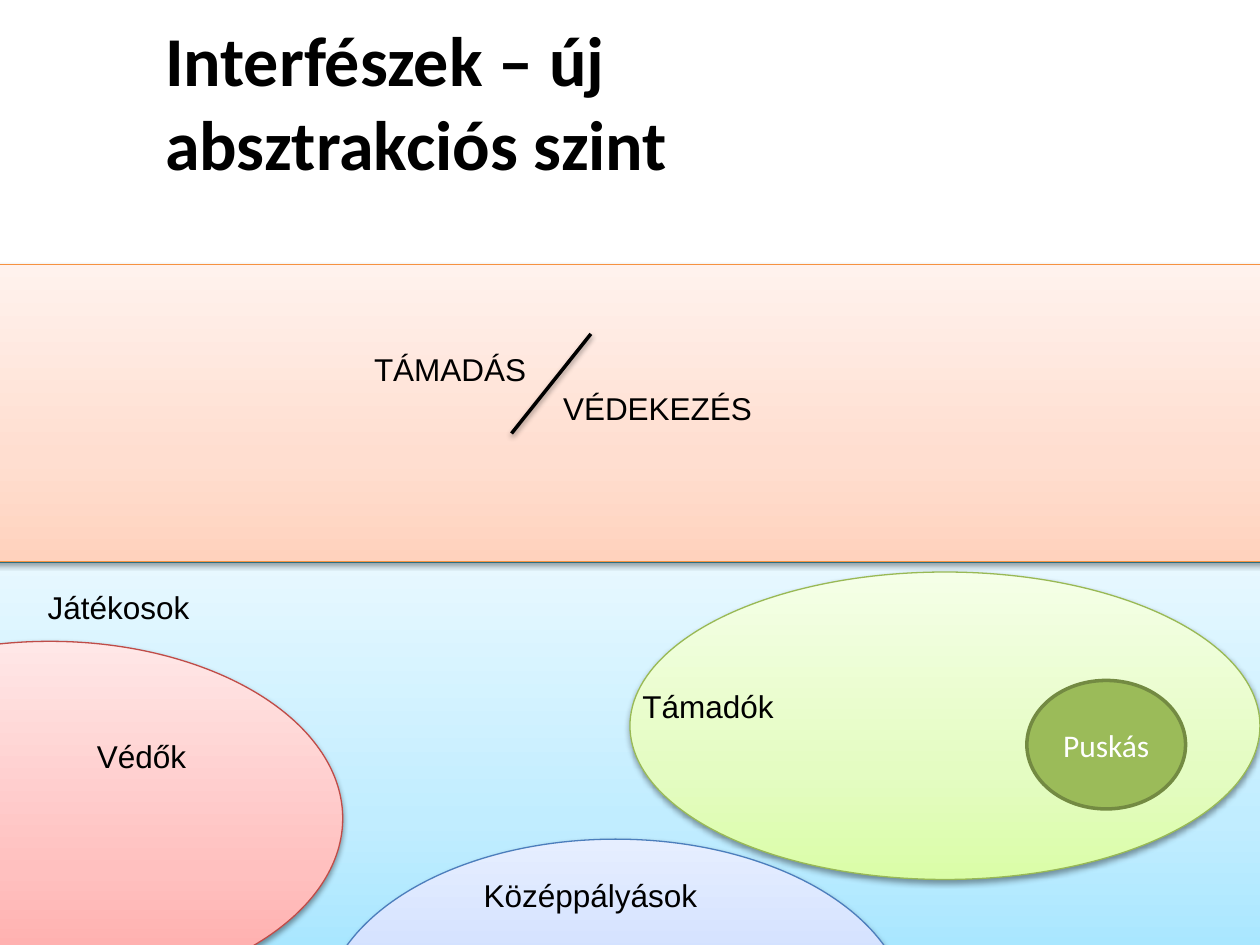
from copy import deepcopy

from pptx import Presentation
from pptx.dml.color import RGBColor as RGB
from pptx.enum.shapes import MSO_CONNECTOR as CONN, MSO_SHAPE as SHAPE
from pptx.enum.text import MSO_ANCHOR as ANCHOR, MSO_AUTO_SIZE as FIT, PP_ALIGN as ALIGN
from pptx.oxml import parse_xml
from pptx.oxml.ns import nsdecls, qn
from pptx.util import Inches, Pt

CELL = Inches(0.1)  # the slide is a grid of 100 columns by 75 rows

COLORS = {
    "text": "000000", "white": "FFFFFF",
    "player": "9BBB59", "player_line": "738A42",
}
# Line colour, then the gradient from bottom to top
TINTS = {
    "field": ("46AAC5", "A7E6FF", "C1EDFF", "E7F8FF"),
    "forwards": ("98B955", "DAFDA7", "E4FCC2", "F5FFE7"),
    "defenders": ("BF4C48", "FFA6A5", "FFC0BF", "FFE7E7"),
    "midfielders": ("4B7EBC", "A4C4FF", "BFD4FF", "E6EEFF"),
    "interfaces": ("F69240", "FFD2BD", "FFDED0", "FFF2ED"),
}
STOPS = (0, 0.35, 1)


def rgb(name):
    return RGB.from_string(COLORS[name])


def cells(*values):
    return [round(v * CELL) for v in values]


def inside(box, x, y, w=0, h=0):
    """Return the slide box of a part given relative to its parent box."""
    return box[0] + x, box[1] + y, w, h


def add_run(p, text, size, font, color="text", bold=False):
    r = p.add_run()
    r.text = text
    r.font.size, r.font.name, r.font.bold = Pt(size), font, bold
    r.font.color.rgb = rgb(color)


def cast_shadow(sp):
    sp._element.spPr.append(parse_xml(
        f'<a:effectLst {nsdecls("a")}>'
        '<a:outerShdw blurRad="40000" dist="20000" dir="5400000" rotWithShape="0">'
        '<a:srgbClr val="000000"><a:alpha val="38000"/></a:srgbClr>'
        '</a:outerShdw></a:effectLst>'))


def add_area(s, kind, box, tint):
    """Add a shadowed shape with a three-stop vertical gradient."""
    line, *shades = TINTS[tint]
    sp = s.shapes.add_shape(kind, *cells(*box))
    sp.fill.gradient()
    sp.fill.gradient_angle = 90
    stops = sp._element.spPr.find(".//" + qn("a:gsLst"))
    stops.append(deepcopy(stops[-1]))
    for stop, position, shade in zip(sp.fill.gradient_stops, STOPS, shades):
        stop.position = position
        stop.color.rgb = RGB.from_string(shade)
    sp.line.color.rgb = RGB.from_string(line)
    sp.line.width = Pt(0.75)
    cast_shadow(sp)


def add_label(s, box, text):
    tf = s.shapes.add_textbox(*cells(*box)).text_frame
    tf.word_wrap = False
    tf.auto_size = FIT.SHAPE_TO_FIT_TEXT
    add_run(tf.paragraphs[0], text, 18, "Arial")


def add_title(s, box, text):
    title = s.shapes.title
    title.left, title.top, title.width, title.height = cells(*box)
    tf = title.text_frame
    tf.word_wrap, tf.auto_size, tf.vertical_anchor = False, FIT.NONE, ANCHOR.TOP
    tf.margin_left = tf.margin_right = Inches(0.09)
    tf.margin_top, tf.margin_bottom = Inches(0.08), Inches(0.04)
    p = tf.paragraphs[0]
    p.alignment = ALIGN.LEFT
    add_run(p, text, 40, "Calibri", bold=True)


def add_player(s, box, name):
    sp = s.shapes.add_shape(SHAPE.OVAL, *cells(*box))
    sp.shadow.inherit = False
    sp.fill.solid()
    sp.fill.fore_color.rgb = rgb("player")
    sp.line.color.rgb = rgb("player_line")
    sp.line.width = Pt(2)
    tf = sp.text_frame
    tf.vertical_anchor = ANCHOR.MIDDLE
    p = tf.paragraphs[0]
    p.alignment = ALIGN.CENTER
    add_run(p, name, 18, "Calibri", "white")


def add_team_part(s, box, tint, label_at, label):
    add_area(s, SHAPE.OVAL, box, tint)
    add_label(s, inside(box, *label_at), label)


def add_field(s, box):
    add_area(s, SHAPE.RECTANGLE, box, "field")
    add_label(s, inside(box, 5.6, 1.6, 13.4, 4), "Játékosok")
    forwards = inside(box, 52.8, 0.8, 50, 24.4)
    add_team_part(s, forwards, "forwards", (0, 8.6, 12.5, 4), "Támadók")
    add_player(s, inside(forwards, 31.5, 8.6, 12.6, 10.2), "Puskás")
    add_team_part(s, inside(box, -16.5, 6.3, 46.5, 28.1), "defenders",
                  (26, 7.1, 9.2, 4), "Védők")
    add_team_part(s, inside(box, 28.4, 22, 46.5, 28.1), "midfielders",
                  (11.8, 2.4, 19.1, 4), "Középpályások")


def add_interfaces(s, box):
    add_area(s, SHAPE.RECTANGLE, box, "interfaces")
    add_label(s, inside(box, 31.5, 6.3, 14.2, 4), "TÁMADÁS")
    start, end = inside(box, 43.4, 13.4)[:2], inside(box, 49.7, 5.5)[:2]
    slash = s.shapes.add_connector(CONN.STRAIGHT, *cells(*start, *end))
    slash.line.color.rgb = rgb("text")
    slash.line.width = Pt(2)
    cast_shadow(slash)
    add_label(s, inside(box, 46.5, 9.4, 17.2, 4), "VÉDEKEZÉS")


def main():
    prs = Presentation()
    prs.slide_width, prs.slide_height = 100 * CELL, 75 * CELL
    s = prs.slides.add_slide(prs.slide_layouts[5])
    add_title(s, (12.2, 0.5, 42.5, 7.1), "Interfészek – új absztrakciós szint")
    add_field(s, (-2.8, 44.6, 105.5, 31.5))
    add_interfaces(s, (-2.8, 21, 105.5, 23.6))
    prs.save("out.pptx")


if __name__ == "__main__":
    main()
